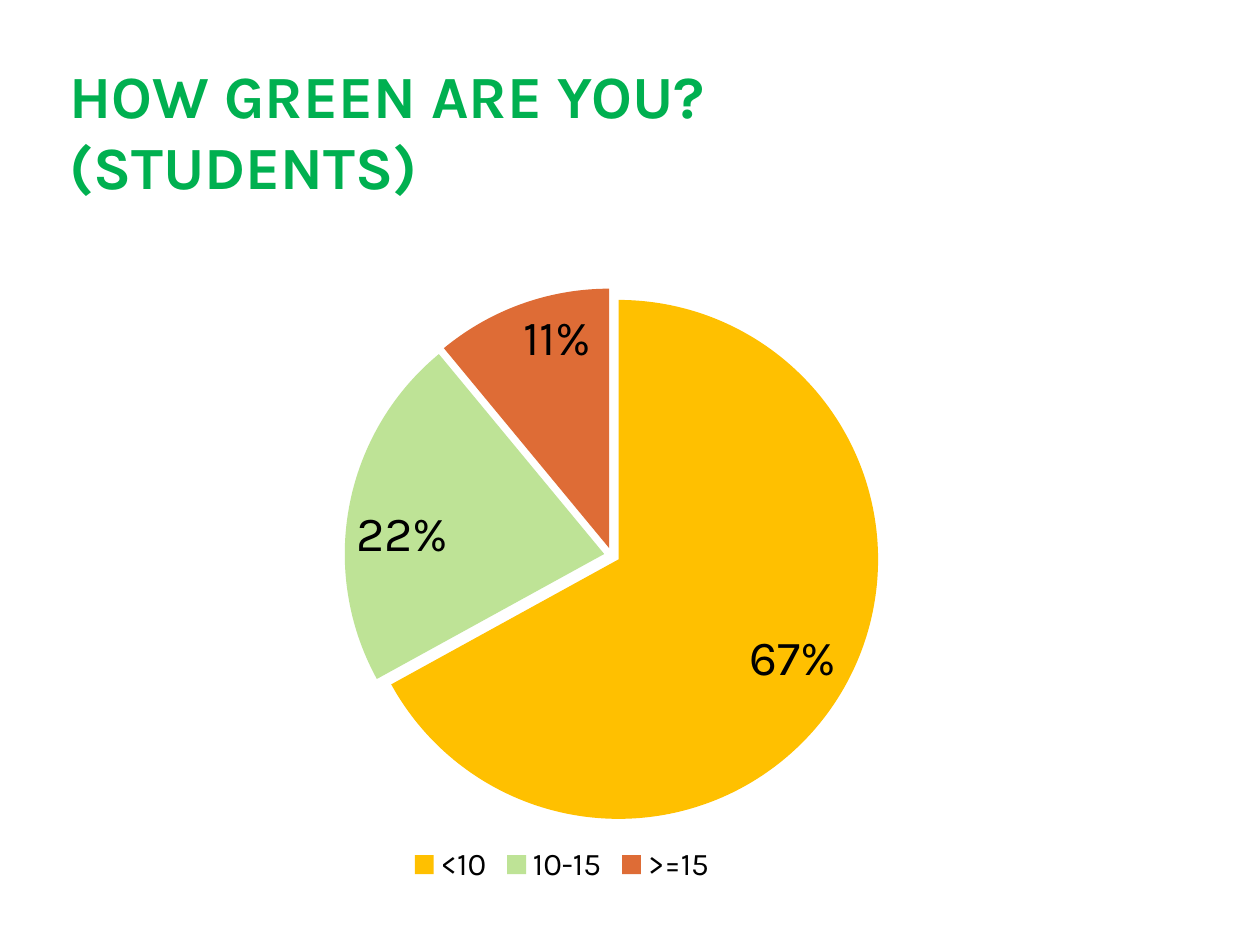
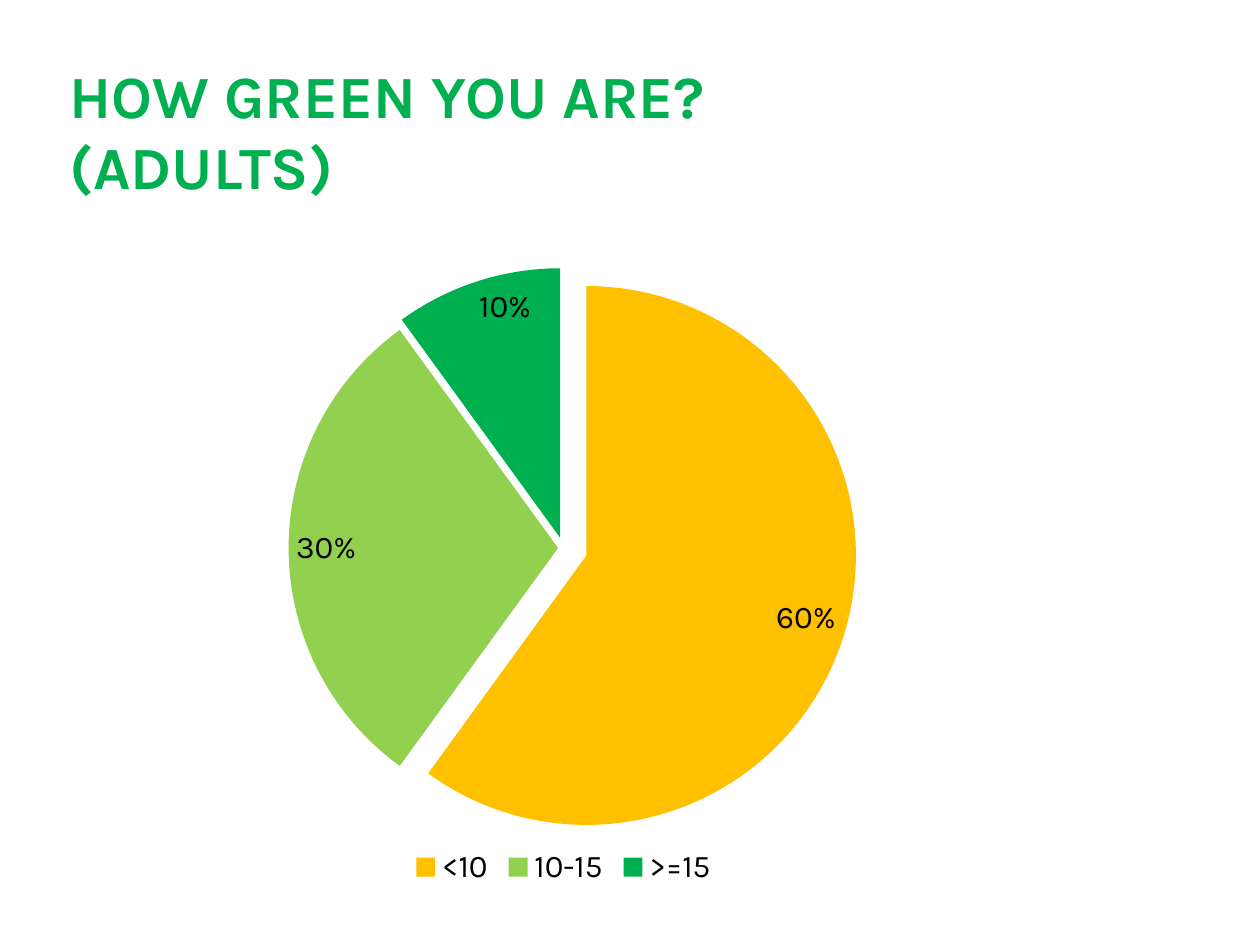
from dataclasses import dataclass

from lxml import etree
from pptx import Presentation
from pptx.chart.data import CategoryChartData
from pptx.dml.color import RGBColor
from pptx.enum.chart import XL_CHART_TYPE, XL_LABEL_POSITION, XL_LEGEND_POSITION
from pptx.enum.text import MSO_ANCHOR, MSO_AUTO_SIZE, PP_ALIGN
from pptx.oxml.ns import qn
from pptx.util import Cm, Pt

PIE = XL_CHART_TYPE.PIE
INSIDE_END = XL_LABEL_POSITION.INSIDE_END
BOTTOM_LEGEND = XL_LEGEND_POSITION.BOTTOM
ANCHOR_BOTTOM = MSO_ANCHOR.BOTTOM
NO_AUTOFIT = MSO_AUTO_SIZE.NONE
LEFT = PP_ALIGN.LEFT
TITLE_ONLY = 5


@dataclass(frozen=True)
class Theme:
    font: str = "Karla"
    green: str = "00B050"
    amber: str = "FFC000"
    pale_green: str = "BEE396"
    lime: str = "92D050"
    rust: str = "DE6C36"
    text: str = "000000"
    title_size: float = 34.2
    chart_size: float = 18
    large_label_size: float = 28


THEME = Theme()
TITLE_BOX = (1.27, 0.89, 20.12, 3.18)
SCORE_BANDS = ("<10", "10-15", ">=15")


@dataclass(frozen=True)
class Survey:
    title: tuple
    shares: tuple
    colors: tuple
    explosions: tuple  # percent of the radius, per slice
    label_size: float
    chart_box: tuple   # left, top, width, height in cm
    plot_area: tuple   # x, y, w, h as fractions of the chart


SURVEYS = (
    Survey(("HOW GREEN ARE YOU?", "(STUDENTS)"), (67, 22, 11),
           (THEME.amber, THEME.pale_green, THEME.rust), (3, 3, 3),
           THEME.large_label_size,
           (1.27, 4.47, 20.12, 13.46), (0.29, 0.11, 0.52, 0.78)),
    Survey(("HOW GREEN YOU ARE?", "(ADULTS)"), (60, 30, 10),
           (THEME.amber, THEME.lime, THEME.green), (9, 2, 4),
           THEME.chart_size,
           (1.3, 4.52, 20.12, 13.46), (0.23, 0.08, 0.54, 0.81)),
)


def style_font(font, size, color):
    font.name = THEME.font
    font.size = Pt(size)
    font.color.rgb = RGBColor.from_string(color)


def place_title(slide, lines, box):
    title = slide.shapes.title
    title.left, title.top, title.width, title.height = map(Cm, box)
    tf = title.text_frame
    tf.auto_size = NO_AUTOFIT
    tf.word_wrap = True
    tf.vertical_anchor = ANCHOR_BOTTOM
    tf.margin_left = tf.margin_right = Cm(0.13)
    tf.margin_top = tf.margin_bottom = 0
    p = tf.paragraphs[0]
    p.alignment = LEFT
    for i, line in enumerate(lines):
        if i:
            p.add_line_break()
        r = p.add_run()
        r.text = line
        r.font.bold = True
        style_font(r.font, THEME.title_size, THEME.green)


def set_plot_area(chart, fractions):
    """Fix the inner plot area, given as fractions of the chart."""
    plot_area = chart.element.find(".//" + qn("c:plotArea"))
    for old in plot_area.findall(qn("c:layout")):
        plot_area.remove(old)
    layout = etree.Element(qn("c:layout"))
    manual = etree.SubElement(layout, qn("c:manualLayout"))
    settings = [("layoutTarget", "inner"), ("xMode", "edge"), ("yMode", "edge")]
    settings += zip("xywh", fractions)
    for tag, value in settings:
        etree.SubElement(manual, qn("c:" + tag)).set("val", str(value))
    plot_area.insert(0, layout)


def style_slices(series, colors, explosions):
    for i, (color, explosion) in enumerate(zip(colors, explosions)):
        fill = series.points[i].format.fill
        fill.solid()
        fill.fore_color.rgb = RGBColor.from_string(color)
    slices = series.points[0].format and series._element.findall(qn("c:dPt"))
    for dpt, explosion in zip(slices, explosions):
        offset = etree.Element(qn("c:explosion"))
        offset.set("val", str(explosion))
        dpt.find(qn("c:spPr")).addprevious(offset)


def place_pie(slide, survey):
    data = CategoryChartData()
    data.categories = SCORE_BANDS
    data.add_series("Series 1", survey.shares)
    chart = slide.shapes.add_chart(PIE, *map(Cm, survey.chart_box), data).chart
    chart.has_title = False
    style_font(chart.font, THEME.chart_size, THEME.text)
    chart.has_legend = True
    chart.legend.position = BOTTOM_LEGEND
    chart.legend.include_in_layout = False

    plot = chart.plots[0]
    plot.vary_by_categories = True
    plot.has_data_labels = True
    labels = plot.data_labels
    labels.show_percentage = True
    labels.show_value = False
    labels.number_format = "0%"
    labels.number_format_is_linked = False
    labels.position = INSIDE_END
    style_font(labels.font, survey.label_size, THEME.text)

    style_slices(plot.series[0], survey.colors, survey.explosions)
    set_plot_area(chart, survey.plot_area)


def add_survey_slide(prs, survey):
    slide = prs.slides.add_slide(prs.slide_layouts[TITLE_ONLY])
    place_title(slide, survey.title, TITLE_BOX)
    place_pie(slide, survey)


def main():
    prs = Presentation()
    prs.slide_width, prs.slide_height = Cm(25.4), Cm(19.05)
    for survey in SURVEYS:
        add_survey_slide(prs, survey)
    prs.save("out.pptx")


if __name__ == "__main__":
    main()
